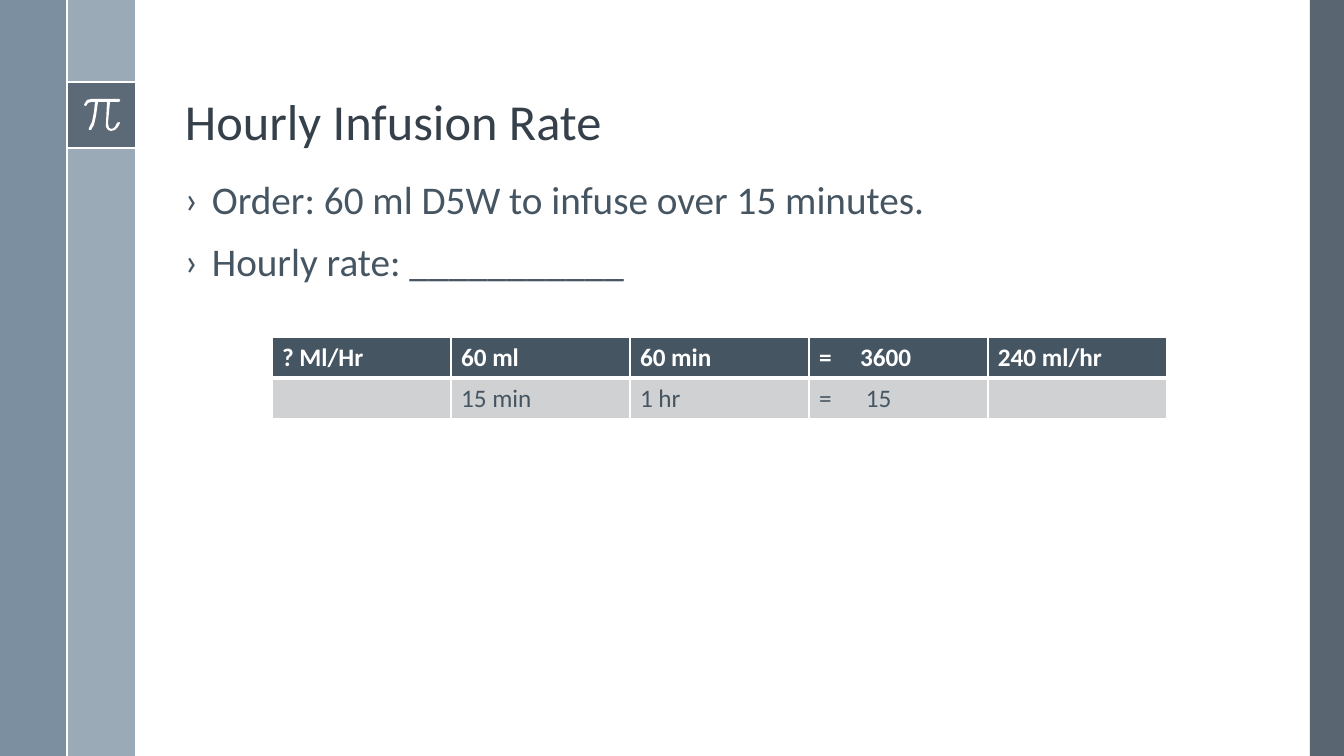
from lxml.etree import SubElement
from pptx import Presentation
from pptx.dml.color import RGBColor
from pptx.enum.shapes import MSO_CONNECTOR as Connector, MSO_SHAPE as Shape
from pptx.enum.text import MSO_ANCHOR as Anchor
from pptx.oxml import parse_xml
from pptx.oxml.ns import nsdecls, qn
from pptx.util import Emu, Pt

PX = 914400 / 100.8
COLORS = {
    "white": "FFFFFF", "slate": "475562", "mist": "9BAAB7", "steel": "6A8093",
    "title": "35404A", "text": "465562", "row": "CFD1D3",
}
TITLE = "Hourly Infusion Rate"
BULLETS = ["Order: 60 ml D5W to infuse over 15 minutes.", "Hourly rate: ___________"]
RATE_ROWS = [
    ["? Ml/Hr", "60 ml", "60 min", "=\t3600", "240 ml/hr"],
    ["", "15 min", "1 hr", "=\t15", ""],
]
TAB_STOPS = [41, 47]
BARS = [
    ((1310, 0, 34, 756), "slate", 90),
    ((67, 0, 68, 756), "mist", 100),
    ((0, 0, 67, 756), "steel", 88),
    ((67, 82, 68, 67), "slate", 75),
]
RULES = [(67, 82, 135, 82), (67, 148, 135, 148), (67, 0, 67, 756)]
PI_OUTLINE = [
    (119, 99), (91, 99), (87, 100), (85, 103), (84, 105), (85, 106), (86, 106),
    (88, 103), (91, 102), (95, 102), (94, 112), (92, 122), (89, 128), (89, 130),
    (91, 130), (94, 125), (96, 116), (98, 102), (107, 102), (106, 123),
    (106, 127), (108, 130), (111, 131), (115, 130), (118, 127), (120, 123),
    (119, 122), (117, 123), (115, 127), (112, 129), (109, 128), (108, 123),
    (110, 102), (119, 102), (120, 101), (120, 100),
]
TITLE_AREA = (175, 19, 1079, 137)
BODY_AREA = (175, 176, 1079, 504)
TABLE_LEFT, TABLE_TOP, COLUMN_WIDTH, ROW_HEIGHT = 272, 337, 179, 41
HANG = 27
TITLE_FONT = {"name": "Calibri", "size": Pt(36), "bold": False}
BODY_FONT = {"name": "Calibri", "size": Pt(28), "bold": False}
ROW_STYLES = [
    ("white", "text", {"name": "Calibri", "size": Pt(18), "bold": True}),
    ("text", "row", {"name": "Calibri", "size": Pt(18), "bold": False}),
]


def px(value):
    return Emu(round(value * PX))


def rgb(name):
    return RGBColor.from_string(COLORS[name])


def paint(shape, color, opacity=100):
    shape.shadow.inherit = False
    shape.line.fill.background()
    shape.fill.solid()
    shape.fill.fore_color.rgb = rgb(color)
    if opacity < 100:
        tint = shape.fill._xPr.find(".//" + qn("a:srgbClr"))
        SubElement(tint, qn("a:alpha"), val=str(opacity * 1000))


def write(para, text, color, style):
    span = para.add_run()
    span.text = text
    for key, value in style.items():
        setattr(span.font, key, value)
    span.font.color.rgb = rgb(color)


def add_text(page, area, anchor):
    frame = page.shapes.add_textbox(*map(px, area)).text_frame
    frame.word_wrap = True
    frame.vertical_anchor = anchor
    return frame


def add_decor(page):
    for area, color, opacity in BARS:
        paint(page.shapes.add_shape(Shape.RECTANGLE, *map(px, area)), color, opacity)
    for ends in RULES:
        rule = page.shapes.add_connector(Connector.STRAIGHT, *map(px, ends))
        rule.line.color.rgb = rgb("white")
        rule.line.width = Pt(1.5)
        SubElement(rule._element.spPr, qn("a:effectLst"))
    builder = page.shapes.build_freeform(*PI_OUTLINE[0], scale=PX)
    builder.add_line_segments(PI_OUTLINE[1:], close=True)
    paint(builder.convert_to_shape(), "white")


def add_wording(page):
    para = add_text(page, TITLE_AREA, Anchor.BOTTOM).paragraphs[0]
    para.line_spacing = 0.9
    write(para, TITLE, "title", TITLE_FONT)

    frame = add_text(page, BODY_AREA, Anchor.TOP)
    for index, bullet in enumerate(BULLETS):
        para = frame.add_paragraph() if index else frame.paragraphs[0]
        para.line_spacing = 0.9
        para.space_before = Pt(14)
        layout = para._p.get_or_add_pPr()
        layout.set("marL", str(px(HANG)))
        layout.set("indent", str(px(-HANG)))
        SubElement(layout, qn("a:buFont"), typeface="Calibri")
        SubElement(layout, qn("a:buChar"), char="›")
        write(para, bullet, "text", BODY_FONT)


def add_borders(cell, widths):
    edges = cell._tc.get_or_add_tcPr()
    for index, (side, width) in enumerate(widths.items()):
        edges.insert(index, parse_xml(
            f'<a:ln{side} {nsdecls("a")} w="{Pt(width)}"><a:solidFill>'
            f'<a:srgbClr val="{COLORS["white"]}"/></a:solidFill></a:ln{side}>'))


def add_rate_table(page):
    rows, columns = len(RATE_ROWS), len(RATE_ROWS[0])
    area = (TABLE_LEFT, TABLE_TOP, columns * COLUMN_WIDTH, rows * ROW_HEIGHT)
    table = page.shapes.add_table(rows, columns, *map(px, area)).table
    for r, (texts, (ink, fill, style)) in enumerate(zip(RATE_ROWS, ROW_STYLES)):
        for c, text in enumerate(texts):
            cell = table.cell(r, c)
            cell.fill.solid()
            cell.fill.fore_color.rgb = rgb(fill)
            add_borders(cell, {"L": 1, "R": 1, "T": 3 if r else 1, "B": 1 if r else 3})
            if not text:
                continue
            para = cell.text_frame.paragraphs[0]
            if "\t" in text:
                stops = SubElement(para._p.get_or_add_pPr(), qn("a:tabLst"))
                SubElement(stops, qn("a:tab"), pos=str(px(TAB_STOPS[r])), algn="l")
            write(para, text, ink, style)


def main():
    deck = Presentation()
    deck.slide_width, deck.slide_height = px(1344), px(756)
    page = deck.slides.add_slide(deck.slide_layouts[6])
    add_decor(page)
    add_wording(page)
    add_rate_table(page)
    deck.save("out.pptx")


if __name__ == "__main__":
    main()
